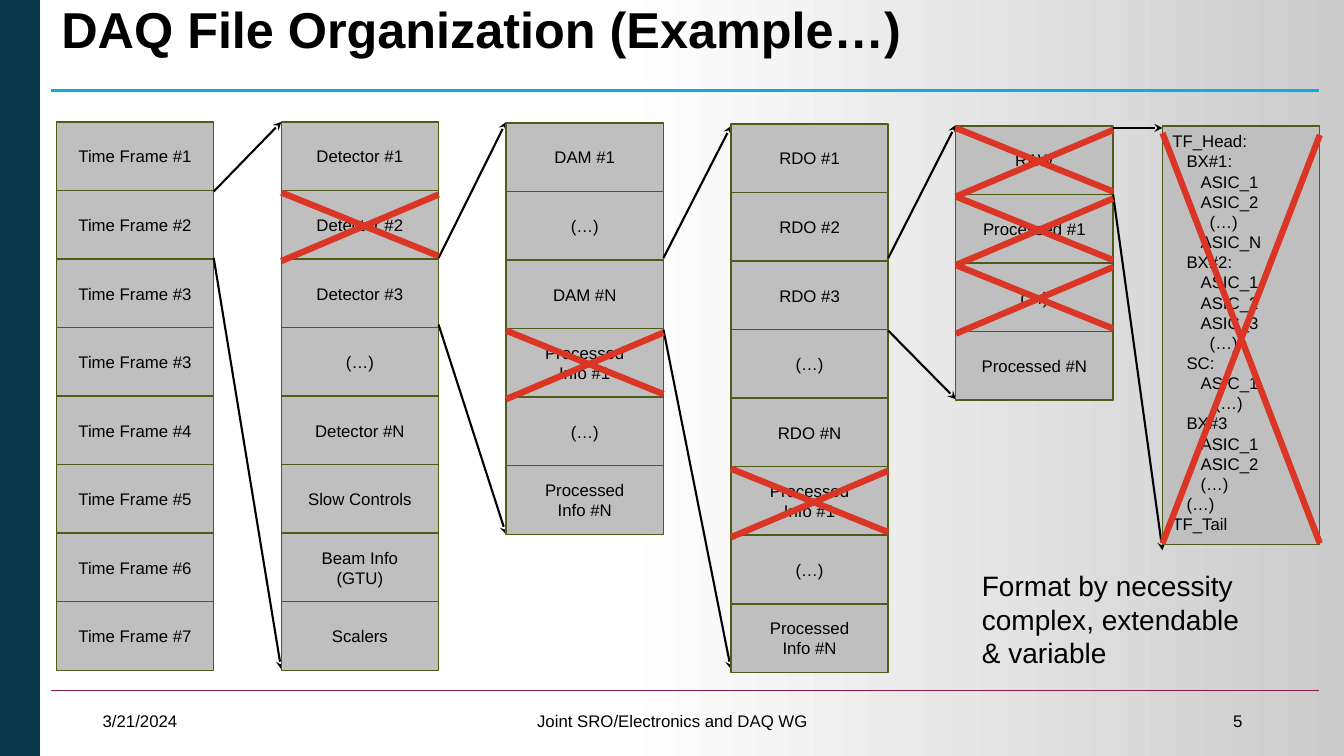
from dataclasses import dataclass

from lxml import etree
from pptx import Presentation
from pptx.dml.color import RGBColor
from pptx.enum.shapes import MSO_CONNECTOR, MSO_SHAPE
from pptx.enum.text import MSO_ANCHOR, PP_ALIGN
from pptx.oxml import parse_xml
from pptx.oxml.ns import nsdecls, qn
from pptx.util import Inches, Pt


@dataclass(frozen=True)
class Theme:
    font: str = "Arial"
    ink: str = "000000"
    block: str = "BFBFBF"
    block_edge: str = "4E5C19"
    cross: str = "DA3525"
    top_rule: str = "0CAED9"
    bottom_rule: str = "881B4C"
    background: tuple = ((3, "0A384A"), (3, "FFFFFF"), (46, "FFFFFF"), (100, "CBCBCB"))
    title_size: int = 36
    remark_size: int = 20
    label_size: int = 12


THEME = Theme()

TITLE = "DAQ File Organization (Example…)"
REMARK = ["Format by necessity", "complex, extendable", "& variable"]
FOOTER = [
    ("Joint SRO/Electronics and DAQ WG", 4.42, 4.5, PP_ALIGN.CENTER),
    ("5", 9.42, 3, PP_ALIGN.RIGHT),
    ("3/21/2024", 0.92, 3, PP_ALIGN.LEFT),
]
RULES = [(0.9, THEME.top_rule, 2), (6.85, THEME.bottom_rule, 1)]

COLUMNS = [
    {"top": 1.21, "crossed": [],
     "blocks": ["Time Frame #1", "Time Frame #2", "Time Frame #3", "Time Frame #3",
                "Time Frame #4", "Time Frame #5", "Time Frame #6", "Time Frame #7"],
     "arrows": [(1.9, 1.21), (2.56, 6.64)]},
    {"top": 1.21, "crossed": [1],
     "blocks": ["Detector #1", "Detector #2", "Detector #3", "(…)", "Detector #N",
                "Slow Controls", "Beam Info\n(GTU)", "Scalers"],
     "arrows": [(2.56, 1.21), (3.22, 5.3)]},
    {"top": 1.22, "crossed": [3],
     "blocks": ["DAM #1", "(…)", "DAM #N", "Processed\nInfo #1", "(…)",
                "Processed\nInfo #N"],
     "arrows": [(2.56, 1.25), (3.27, 6.64)]},
    {"top": 1.23, "crossed": [5],
     "blocks": ["RDO #1", "RDO #2", "RDO #3", "(…)", "RDO #N", "Processed\nInfo #1",
                "(…)", "Processed\nInfo #N"],
     "arrows": [(2.56, 1.24), (3.28, 3.96)]},
    {"top": 1.25, "crossed": [0, 1, 2],
     "blocks": ["RAW", "Processed #1", "(…)", "Processed #N"],
     "arrows": [(1.27, 1.27), (1.93, 5.46)]},
]
FRAME = [
    ("TF_Head:", 0),
    ("BX#1:", 0.14), ("ASIC_1", 0.28), ("ASIC_2", 0.28), ("(…)", 0.37), ("ASIC_N", 0.28),
    ("BX#2:", 0.14), ("ASIC_1", 0.28), ("ASIC_2", 0.28), ("ASIC_3", 0.28), ("(…)", 0.37),
    ("SC:", 0.14), ("ASIC_1", 0.28), ("(…)", 0.42),
    ("BX#3", 0.14), ("ASIC_1", 0.28), ("ASIC_2", 0.28), ("(…)", 0.28),
    ("(…)", 0.14),
    ("TF_Tail", 0),
]

COLUMN_LEFT, COLUMN_STEP = 0.56, 2.23
BLOCK_WIDTH, BLOCK_HEIGHT = 1.56, 0.68
FRAME_LEFT, FRAME_TOP, FRAME_HEIGHT = 11.53, 1.25, 4.15


def rgb(value):
    return RGBColor.from_string(value)


def write(shape, lines, size, align=PP_ALIGN.LEFT, anchor=MSO_ANCHOR.TOP, wrap=True, bold=False):
    frame = shape.text_frame
    frame.word_wrap = wrap
    frame.vertical_anchor = anchor
    frame.text = "\n".join(lines)
    for paragraph in frame.paragraphs:
        paragraph.alignment = align
        paragraph.font.name = THEME.font
        paragraph.font.size = Pt(size)
        paragraph.font.bold = bold
        paragraph.font.color.rgb = rgb(THEME.ink)
    return frame.paragraphs


def add_text(slide, box, lines, size, **style):
    return write(slide.shapes.add_textbox(*map(Inches, box)), lines, size, **style)


def add_block(slide, box, lines, **style):
    block = slide.shapes.add_shape(MSO_SHAPE.RECTANGLE, *map(Inches, box))
    block.shadow.inherit = False
    block.fill.solid()
    block.fill.fore_color.rgb = rgb(THEME.block)
    block.line.color.rgb = rgb(THEME.block_edge)
    block.line.width = Pt(1)
    return write(block, lines, THEME.label_size, **style)


def add_line(slide, start, end, color, width, arrow=False):
    line = slide.shapes.add_connector(MSO_CONNECTOR.STRAIGHT, *map(Inches, start + end))
    line.line.color.rgb = rgb(color)
    line.line.width = Pt(width)
    properties = line._element.spPr
    if arrow:
        etree.SubElement(properties.find(qn("a:ln")), qn("a:tailEnd"), type="stealth")
    etree.SubElement(properties, qn("a:effectLst"))


def add_cross(slide, left, top, right, fall_end, rise_start, rise_end):
    add_line(slide, (left, top), (right, fall_end), THEME.cross, 4.5)
    add_line(slide, (left, rise_start), (right, rise_end), THEME.cross, 4.5)


def paint_background(slide):
    fill = slide.background.fill
    fill.gradient()
    fill.gradient_angle = 0
    stops = slide._element.find(".//" + qn("a:gsLst"))
    for stop in list(stops):
        stops.remove(stop)
    for percent, color in THEME.background:
        stops.append(parse_xml(
            f'<a:gs {nsdecls("a")} pos="{percent * 1000}"><a:srgbClr val="{color}"/></a:gs>'))


def add_columns(slide):
    lefts = [COLUMN_LEFT + i * COLUMN_STEP for i in range(len(COLUMNS))]
    targets = lefts[1:] + [FRAME_LEFT]
    for left, target, column in zip(lefts, targets, COLUMNS):
        for row, label in enumerate(column["blocks"]):
            top = column["top"] + row * BLOCK_HEIGHT
            add_block(slide, (left, top, BLOCK_WIDTH, BLOCK_HEIGHT), label.split("\n"),
                      align=PP_ALIGN.CENTER, anchor=MSO_ANCHOR.MIDDLE)
        for start, end in column["arrows"]:
            add_line(slide, (left + BLOCK_WIDTH, start), (target, end), THEME.ink, 1.5, arrow=True)
    for left, column in zip(lefts, COLUMNS):
        for row in column["crossed"]:
            top = column["top"] + row * BLOCK_HEIGHT + 0.02
            add_cross(slide, left, top, left + BLOCK_WIDTH, top + 0.63, top + 0.68, top + 0.02)


def add_frame(slide):
    box = (FRAME_LEFT, FRAME_TOP, BLOCK_WIDTH, FRAME_HEIGHT)
    paragraphs = add_block(slide, box, [text for text, _ in FRAME])
    for paragraph, (_, indent) in zip(paragraphs, FRAME):
        paragraph._p.get_or_add_pPr().set("marL", str(Inches(indent)))
    add_cross(slide, FRAME_LEFT, 1.32, FRAME_LEFT + BLOCK_WIDTH, 5.39, 5.39, 1.34)


def main():
    deck = Presentation()
    deck.slide_width, deck.slide_height = Inches(13.33), Inches(7.5)
    slide = deck.slides.add_slide(deck.slide_layouts[6])
    paint_background(slide)
    for y, color, width in RULES:
        add_line(slide, (0.51, y), (13.08, y), color, width)
    title = add_text(slide, (0.51, 0, 12.58, 0.89), [TITLE], THEME.title_size, bold=True)
    title[0].line_spacing = 0.9
    for text, left, width, align in FOOTER:
        add_text(slide, (left, 6.95, width, 0.4), [text], THEME.label_size,
                 align=align, anchor=MSO_ANCHOR.MIDDLE)
    add_columns(slide)
    add_frame(slide)
    add_text(slide, (9.64, 5.59, 2.77, 1.11), REMARK, THEME.remark_size, wrap=False)
    deck.save("out.pptx")


if __name__ == "__main__":
    main()
